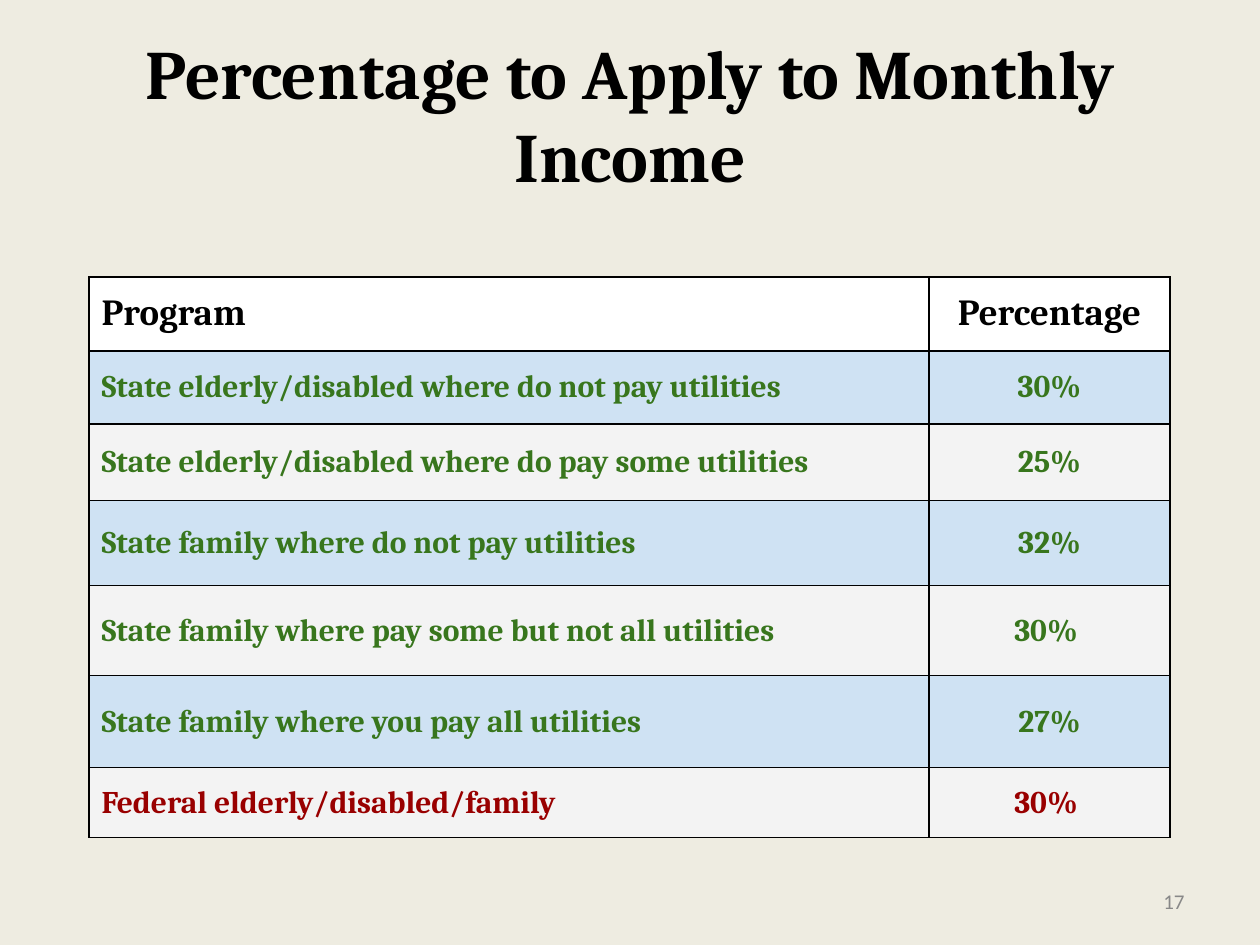
from lxml import etree
from pptx import Presentation
from pptx.dml.color import RGBColor
from pptx.enum.text import MSO_ANCHOR, MSO_AUTO_SIZE, PP_ALIGN
from pptx.oxml.ns import qn
from pptx.util import Pt

EMU_PER_PX = 914400 / 126
LEFT, CENTER, RIGHT = PP_ALIGN.LEFT, PP_ALIGN.CENTER, PP_ALIGN.RIGHT
MIDDLE = MSO_ANCHOR.MIDDLE
NO_AUTOFIT = MSO_AUTO_SIZE.NONE
TITLE_ONLY = 5

CREAM = RGBColor(0xEE, 0xEC, 0xE1)
BLACK = RGBColor(0x00, 0x00, 0x00)
WHITE = RGBColor(0xFF, 0xFF, 0xFF)
GRAY = RGBColor(0x88, 0x88, 0x88)
PALE_BLUE = RGBColor(0xCF, 0xE2, 0xF3)
PALE_GRAY = RGBColor(0xF3, 0xF3, 0xF3)
GREEN = RGBColor(0x38, 0x76, 0x1D)
RED = RGBColor(0x99, 0x00, 0x00)

HEADER = ("Program", "Percentage")
PROGRAMS = [
    ("State elderly/disabled where do not pay utilities", "30%"),
    ("State elderly/disabled where do pay some utilities", "25%"),
    ("State family where do not pay utilities", "32%"),
    ("State family where pay some but not all utilities", "30% "),
    ("State family where you pay all utilities", "27%"),
    ("Federal elderly/disabled/family", "30% "),
]
COLUMN_WIDTHS = (840, 241)
ROW_HEIGHTS = (74, 73, 77, 85, 90, 92, 70)


def px(length):
    return round(length * EMU_PER_PX)


class SlideBuilder:
    heading_font = "Cambria"
    number_font = "Calibri"

    def __init__(self, slide):
        self.slide = slide
        background = slide.background.fill
        background.solid()
        background.fore_color.rgb = CREAM

    def add_text(self, frame, text, size, color, align, font=heading_font, bold=True):
        paragraph = frame.paragraphs[0]
        paragraph.alignment = align
        run = paragraph.add_run()
        run.text = text
        run.font.name = font
        run.font.size = Pt(size)
        run.font.bold = bold
        run.font.color.rgb = color

    def title(self, text, left, top, width, height, bottom_inset):
        title = self.slide.shapes.title
        title.left, title.top = px(left), px(top)
        title.width, title.height = px(width), px(height)
        frame = title.text_frame
        frame.word_wrap = True
        frame.auto_size = NO_AUTOFIT
        frame.vertical_anchor = MIDDLE
        frame.margin_bottom = px(bottom_inset)
        self.add_text(frame, text, 39.6, BLACK, CENTER)

    def page_number(self, text, left, top, width, height):
        box = self.slide.shapes.add_textbox(px(left), px(top), px(width), px(height))
        frame = box.text_frame
        frame.word_wrap = True
        frame.vertical_anchor = MIDDLE
        self.add_text(frame, text, 12, GRAY, RIGHT, self.number_font, bold=False)

    def table(self, rows, left, top, widths, heights):
        table = self.slide.shapes.add_table(
            len(heights), len(widths), px(left), px(top),
            px(sum(widths)), px(sum(heights))).table
        for column, width in zip(table.columns, widths):
            column.width = px(width)
        for row, height in zip(table.rows, heights):
            row.height = px(height)
        for r, (texts, size, color, fill) in enumerate(rows):
            for c, (text, align) in enumerate(zip(texts, (LEFT, CENTER))):
                self.cell(table.cell(r, c), text, size, color, fill, align)

    def cell(self, cell, text, size, color, fill, align):
        cell.vertical_anchor = MIDDLE
        self.add_text(cell.text_frame, text, size, color, align)
        # Cell borders come before the fill in the cell properties
        properties = cell._tc.get_or_add_tcPr()
        for side in ("lnL", "lnR", "lnT", "lnB"):
            line = etree.SubElement(properties, qn(f"a:{side}"), w=str(Pt(0.75)))
            solid = etree.SubElement(line, qn("a:solidFill"))
            etree.SubElement(solid, qn("a:srgbClr"), val=str(BLACK))
        cell.fill.solid()
        cell.fill.fore_color.rgb = fill


def main():
    presentation = Presentation()
    presentation.slide_width = px(1260)
    presentation.slide_height = px(945)
    layout = presentation.slide_layouts[TITLE_ONLY]
    builder = SlideBuilder(presentation.slides.add_slide(layout))

    # Page number
    builder.page_number("17", 903, 876, 294, 50)

    # Percentage table: banded rows, federal program in red
    rows = [(HEADER, 21, BLACK, WHITE)]
    for i, program in enumerate(PROGRAMS):
        color = RED if program[0].startswith("Federal") else GREEN
        rows.append((program, 18, color, PALE_GRAY if i % 2 else PALE_BLUE))
    builder.table(rows, 89, 277, COLUMN_WIDTHS, ROW_HEIGHTS)

    # Title
    builder.title("Percentage to Apply to Monthly Income", 63, 76, 1134, 157,
                  bottom_inset=89)

    presentation.save("out.pptx")


if __name__ == "__main__":
    main()
